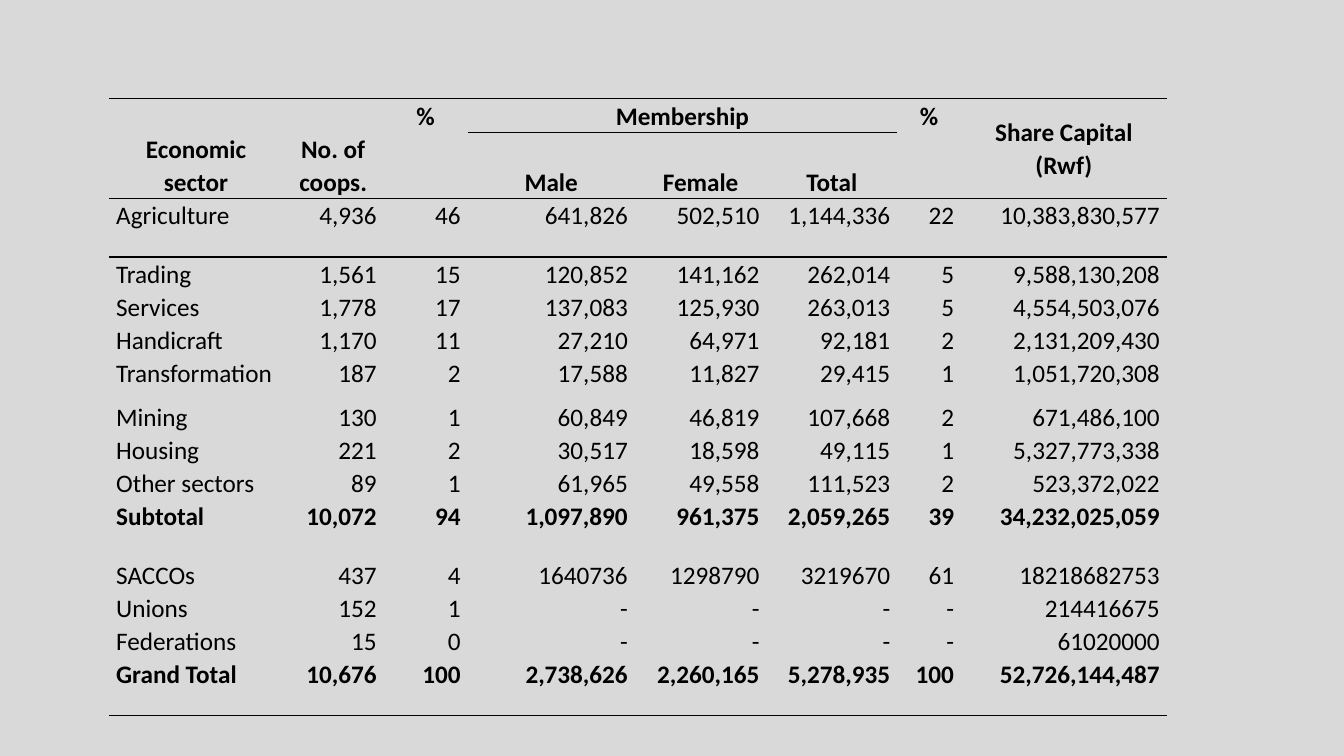
from pptx import Presentation
from pptx.dml.color import RGBColor
from pptx.enum.text import MSO_ANCHOR, PP_ALIGN
from pptx.oxml import parse_xml
from pptx.oxml.ns import nsdecls
from pptx.util import Pt

BLACK = RGBColor(0x00, 0x00, 0x00)
GREY = RGBColor(0xD9, 0xD9, 0xD9)
PLAIN = "{2D5ABB26-0587-4C30-8999-92F81FD0307C}"

widths = [124, 72, 60, 119.5, 94, 93.5, 45.5, 147]
heights = [24, 21, 42, 23, 23, 23, 32, 23, 23, 23, 42, 23, 23, 22, 42]
heads = [
    ["Economic sector", "No. of coops.", "%", "Membership", "", "", "%", "Share Capital (Rwf)"],
    ["", "", "", "Male", "Female", "Total", "", ""],
]
sectors = [
    ["Agriculture", "4,936", "46", "641,826", "502,510", "1,144,336", "22", "10,383,830,577"],
    ["Trading", "1,561", "15", "120,852", "141,162", "262,014", "5", "9,588,130,208"],
    ["Services", "1,778", "17", "137,083", "125,930", "263,013", "5", "4,554,503,076"],
    ["Handicraft", "1,170", "11", "27,210", "64,971", "92,181", "2", "2,131,209,430"],
    ["Transformation", "187", "2", "17,588", "11,827", "29,415", "1", "1,051,720,308"],
    ["Mining", "130", "1", "60,849", "46,819", "107,668", "2", "671,486,100"],
    ["Housing", "221", "2", "30,517", "18,598", "49,115", "1", "5,327,773,338"],
    ["Other sectors", "89", "1", "61,965", "49,558", "111,523", "2", "523,372,022"],
    ["Subtotal", "10,072", "94", "1,097,890", "961,375", "2,059,265", "39", "34,232,025,059"],
    ["SACCOs", "437", "4", "1640736", "1298790", "3219670", "61", "18218682753"],
    ["Unions", "152", "1", "-", "-", "-", "-", "214416675"],
    ["Federations", "15", "0", "-", "-", "-", "-", "61020000"],
    ["Grand Total", "10,676", "100", "2,738,626", "2,260,165", "5,278,935", "100", "52,726,144,487"],
]
rows = heads + sectors
last = len(rows) - 1
tall = (0, 1, 7)
members = (3, 4, 5)


def write(cell, text, bold=False, align=PP_ALIGN.RIGHT, anchor=MSO_ANCHOR.TOP):
    cell.margin_left = cell.margin_right = Pt(5)
    cell.margin_top = cell.margin_bottom = Pt(0)
    cell.vertical_anchor = anchor
    para = cell.text_frame.paragraphs[0]
    para.alignment = align
    para.line_spacing = 1.07
    run = para.add_run()
    run.text = text
    run.font.name = "Calibri"
    run.font.size = Pt(18)
    run.font.bold = bold
    run.font.color.rgb = BLACK


def border(cell, side):
    cell._tc.get_or_add_tcPr().append(parse_xml(
        f'<a:ln{side} {nsdecls("a")} w="{Pt(1)}"><a:solidFill>'
        f'<a:srgbClr val="{BLACK}"/></a:solidFill></a:ln{side}>'))


deck = Presentation()
deck.slide_width = Pt(960)
deck.slide_height = Pt(540)
slide = deck.slides.add_slide(deck.slide_layouts[6])
slide.background.fill.solid()
slide.background.fill.fore_color.rgb = GREY

frame = slide.shapes.add_table(
    len(rows), len(widths), Pt(78), Pt(70.6), Pt(sum(widths)), Pt(sum(heights)))
table = frame.table
table.first_row = table.horz_banding = False
table._tbl.tblPr[0].text = PLAIN
for col, width in zip(table.columns, widths):
    col.width = Pt(width)
for row, height in zip(table.rows, heights):
    row.height = Pt(height)
for c in tall:
    table.cell(0, c).merge(table.cell(1, c))
table.cell(0, members[0]).merge(table.cell(0, members[-1]))

for r, values in enumerate(rows):
    for c, text in enumerate(values):
        cell = table.cell(r, c)
        if r in (0, 2) or (r == 1 and c in members):
            border(cell, "T")
        if r in (1, last) or (r == 0 and c in tall + members):
            border(cell, "B")
        cell.fill.background()
        if not text:
            continue
        if r < len(heads):
            anchor = MSO_ANCHOR.MIDDLE if c == 7 else MSO_ANCHOR.BOTTOM
            write(cell, text, bold=True, align=PP_ALIGN.CENTER, anchor=anchor)
        else:
            align = PP_ALIGN.RIGHT if c else PP_ALIGN.LEFT
            write(cell, text, bold="total" in values[0].lower(), align=align)

deck.save("out.pptx")
